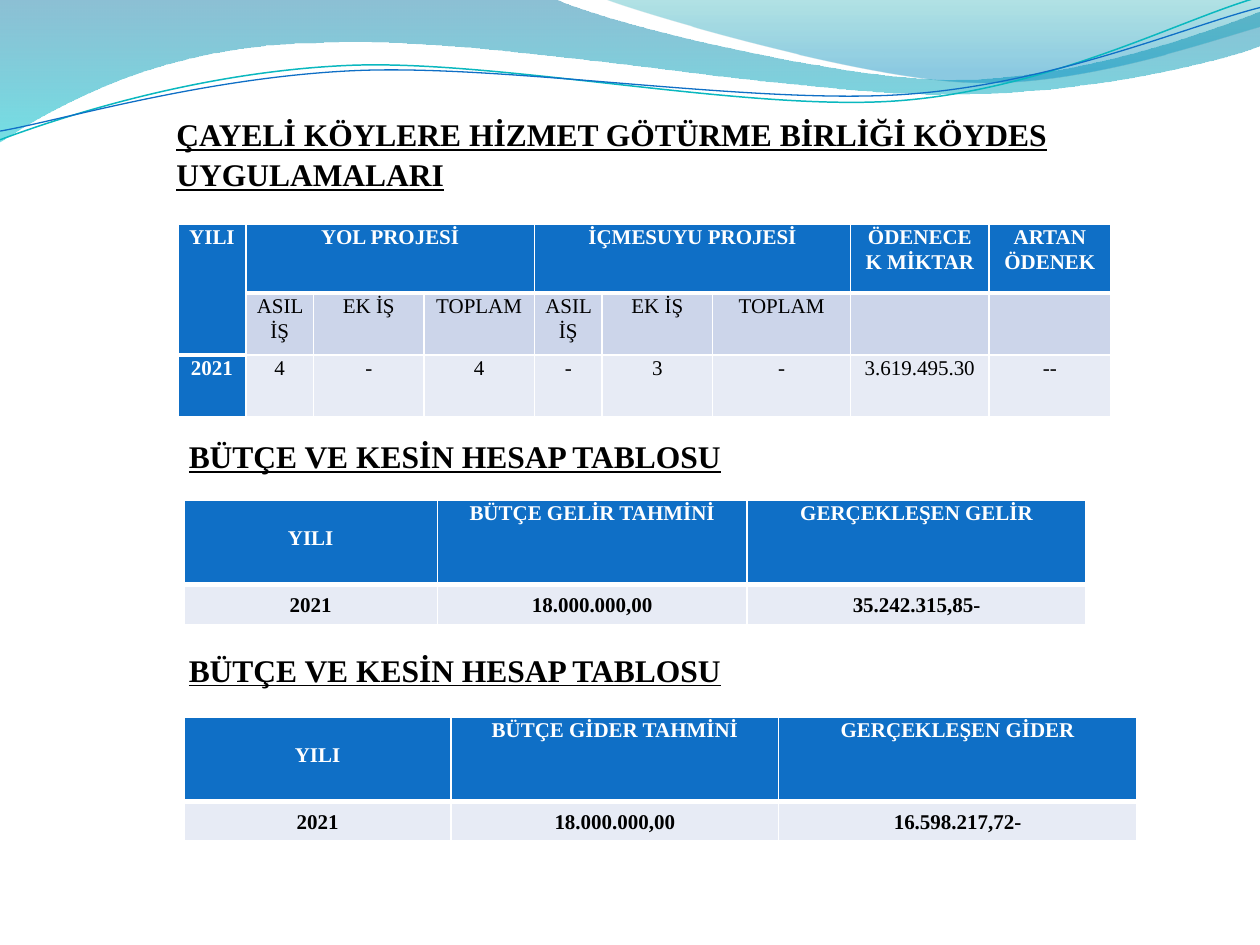
from lxml.etree import SubElement
from pptx import Presentation
from pptx.dml.color import RGBColor
from pptx.enum.text import MSO_ANCHOR, MSO_AUTO_SIZE, PP_ALIGN
from pptx.oxml.ns import qn
from pptx.util import Pt

COLORS = {
    "blue": "0F6FC6", "teal": "0AB8BF", "white": "FFFFFF", "black": "000000",
    "band_dark": "CCD5EA", "band_light": "E7EBF5",
    "deep_blue": "0074A1", "cyan": "00C6CF", "sea": "00A1A9", "sky": "008BBF",
}
FONT = "Times New Roman"


def rgb(name):
    return RGBColor.from_string(COLORS[name])


def write(tf, text, size=12, color="black", bold=False, underline=False,
          align=PP_ALIGN.CENTER, spacing=1.07):
    p = tf.paragraphs[0]
    p.alignment = align
    p.line_spacing = spacing
    r = p.add_run()
    r.text = text
    r.font.name, r.font.size = FONT, Pt(size)
    r.font.bold, r.font.underline = bold, underline
    r.font.color.rgb = rgb(color)


def set_border(cell, side, width):
    ln = SubElement(cell._tc.get_or_add_tcPr(), qn(f"a:ln{side}"), w=str(Pt(width)))
    fill = SubElement(ln, qn("a:solidFill"))
    SubElement(fill, qn("a:srgbClr"), val=COLORS["white"])


def bend(sp, segments):
    """Join the three lines drawn for each 6-number segment into one Bezier curve."""
    lines = iter(list(sp._element.iter(qn("a:lnTo"))))
    for segment in segments:
        line = next(lines)
        if len(segment) == 6:
            line.tag = qn("a:cubicBezTo")
            for _ in range(2):
                other = next(lines)
                line.append(other[0])
                other.getparent().remove(other)


class SlideBuilder:
    def __init__(self, prs):
        self.s = prs.slides.add_slide(prs.slide_layouts[5])

    def outline(self, start, *segments, closed=False):
        """Freeform whose segments are lines (2 numbers) or curves (6 numbers)."""
        builder = self.s.shapes.build_freeform(*map(Pt, start))
        points = [(Pt(segment[i]), Pt(segment[i + 1]))
                  for segment in segments for i in range(0, len(segment), 2)]
        builder.add_line_segments(points, close=closed)
        sp = builder.convert_to_shape()
        bend(sp, segments)
        sp.shadow.inherit = False
        return sp

    def wave(self, stops, start, *segments):
        """Gradient area; stops are (position, colour, opacity percent)."""
        sp = self.outline(start, *segments, closed=True)
        sp.line.fill.background()
        sp.fill.gradient()
        sp.fill.gradient_angle = 270
        for stop, (position, color, _) in zip(sp.fill.gradient_stops, stops):
            stop.position = position
            stop.color.rgb = rgb(color)
        tints = sp._element.spPr.iter(qn("a:srgbClr"))
        for tint, (_, _, opacity) in zip(tints, stops):
            SubElement(tint, qn("a:alpha"), val=str(opacity * 1000))

    def wave_line(self, color, width, start, *segments):
        sp = self.outline(start, *segments)
        sp.fill.background()
        sp.line.color.rgb = rgb(color)
        sp.line.width = Pt(width)

    def title(self, text, left, top, width, height):
        sp = self.s.shapes.title
        sp.left, sp.top, sp.width, sp.height = map(Pt, (left, top, width, height))
        tf = sp.text_frame
        tf.word_wrap = True
        tf.auto_size = MSO_AUTO_SIZE.NONE
        tf.vertical_anchor = MSO_ANCHOR.TOP
        write(tf, text, size=18, bold=True, underline=True, align=PP_ALIGN.LEFT)

    def heading(self, text, left, top, width, height):
        tf = self.s.shapes.add_textbox(*map(Pt, (left, top, width, height))).text_frame
        write(tf, text, size=18, bold=True, underline=True,
              align=PP_ALIGN.LEFT, spacing=1)

    def table(self, left, top, widths, heights, rows, head_rows, bands, merges=(),
              head_column=False, bold=False, anchor=MSO_ANCHOR.TOP):
        """head_rows counts the header rows of each column; bands colours each row."""
        frame = self.s.shapes.add_table(len(rows), len(widths), Pt(left), Pt(top),
                                        Pt(sum(widths)), Pt(sum(heights)))
        table = frame.table
        for column, width in zip(table.columns, widths):
            column.width = Pt(width)
        for row, height in zip(table.rows, heights):
            row.height = Pt(height)
        for r, texts in enumerate(rows):
            for c, text in enumerate(texts):
                cell = table.cell(r, c)
                cell.margin_left = cell.margin_right = Pt(5.4)
                cell.margin_top = cell.margin_bottom = 0
                set_border(cell, "L", 1)
                set_border(cell, "R", 1)
                set_border(cell, "T", 3 if r == head_rows[c] else 1)
                set_border(cell, "B", 3 if r == head_rows[c] - 1 else 1)
                in_head = r < head_rows[c]
                blue = in_head or (head_column and c == 0)
                cell.fill.solid()
                cell.fill.fore_color.rgb = rgb("blue" if blue else bands[r])
                cell.vertical_anchor = MSO_ANCHOR.TOP if in_head else anchor
                if text:
                    write(cell.text_frame, text, bold=blue or bold,
                          color="white" if blue else "black")
        for first, last in merges:
            table.cell(*first).merge(table.cell(*last))
        return table

    def budget_table(self, top, widths, rows):
        table = self.table(105.2, top, widths, [48.2, 22.8], rows, [1, 1, 1],
                           ["blue", "band_light"], bold=True, anchor=MSO_ANCHOR.MIDDLE)
        table.cell(0, 0).margin_top = Pt(14.4)


def main():
    prs = Presentation()
    prs.slide_width, prs.slide_height = Pt(720), Pt(540)
    b = SlideBuilder(prs)

    b.wave([(0, "deep_blue", 45), (1, "cyan", 55)],
           (0, -0.7), (316.8, -0.7),
           (342.7, 12.2, 478.1, 45.4, 545.8, 45.4),
           (614.2, 45.4, 689.8, 18.7, 720, 6.5), (720.7, 25.9),
           (707.8, 31.7, 626.4, 54.7, 537.1, 54),
           (447.8, 54, 275, 20.2, 185, 24.5),
           (92.9, 25.2, 33.1, 59.8, -0.7, 81.4))
    b.wave([(0, "sea", 30), (0.8, "sky", 45)],
           (344.9, -0.7), (366.5, 7.9, 491, 44.6, 553.7, 46.8),
           (616.3, 49.7, 691.9, 23, 720, 15.1), (720, 0))
    b.wave_line("teal", 0.85, (0, 79.9),
                (34.6, 67, 113.8, 41, 199.4, 37.4),
                (284.4, 33.8, 427, 64.1, 513.4, 57.6),
                (599.8, 51.1, 675.4, 10.8, 718.6, -1.4))
    b.wave_line("blue", 0.75, (0, 74.9),
                (33.8, 69.1, 118.1, 43.9, 203.8, 40.3),
                (290.2, 36.7, 429.8, 59.8, 516.2, 54),
                (601.9, 48.2, 677.5, 15.1, 720, 4.3))

    b.title("ÇAYELİ KÖYLERE HİZMET GÖTÜRME BİRLİĞİ KÖYDES UYGULAMALARI",
            93.6, 60.4, 617.8, 53)

    narrow, medium, wide = 38.7, 63.1, 79
    b.table(101.8, 128.2,
            [narrow, narrow, medium, medium, narrow, medium, wide, wide, 69.6],
            [39.3, 35.3, 35.3],
            [["YILI", "YOL PROJESİ", "", "", "İÇMESUYU PROJESİ", "", "",
              "ÖDENECEK MİKTAR", "ARTAN ÖDENEK"],
             ["", *["ASIL İŞ", "EK İŞ", "TOPLAM"] * 2, "", ""],
             ["2021", "4", "-", "4", "-", "3", "-", "3.619.495.30", "--"]],
            head_rows=[2] + [1] * 8, bands=["blue", "band_dark", "band_light"],
            merges=[((0, 0), (1, 0)), ((0, 1), (0, 3)), ((0, 4), (0, 6))],
            head_column=True)

    for top in (246.2, 368.2):
        b.heading("BÜTÇE VE KESİN HESAP TABLOSU", 100.8, top, 321.8, 58.3)
    b.budget_table(285.9, [144.7, 177.1, 193.7],
                   [["YILI", "BÜTÇE GELİR TAHMİNİ", "GERÇEKLEŞEN GELİR"],
                    ["2021", "18.000.000,00", "35.242.315,85-"]])
    b.budget_table(409.7, [152.6, 187.2, 204.5],
                   [["YILI", "BÜTÇE GİDER TAHMİNİ", "GERÇEKLEŞEN GİDER"],
                    ["2021", "18.000.000,00", "16.598.217,72-"]])

    prs.save("out.pptx")


if __name__ == "__main__":
    main()
